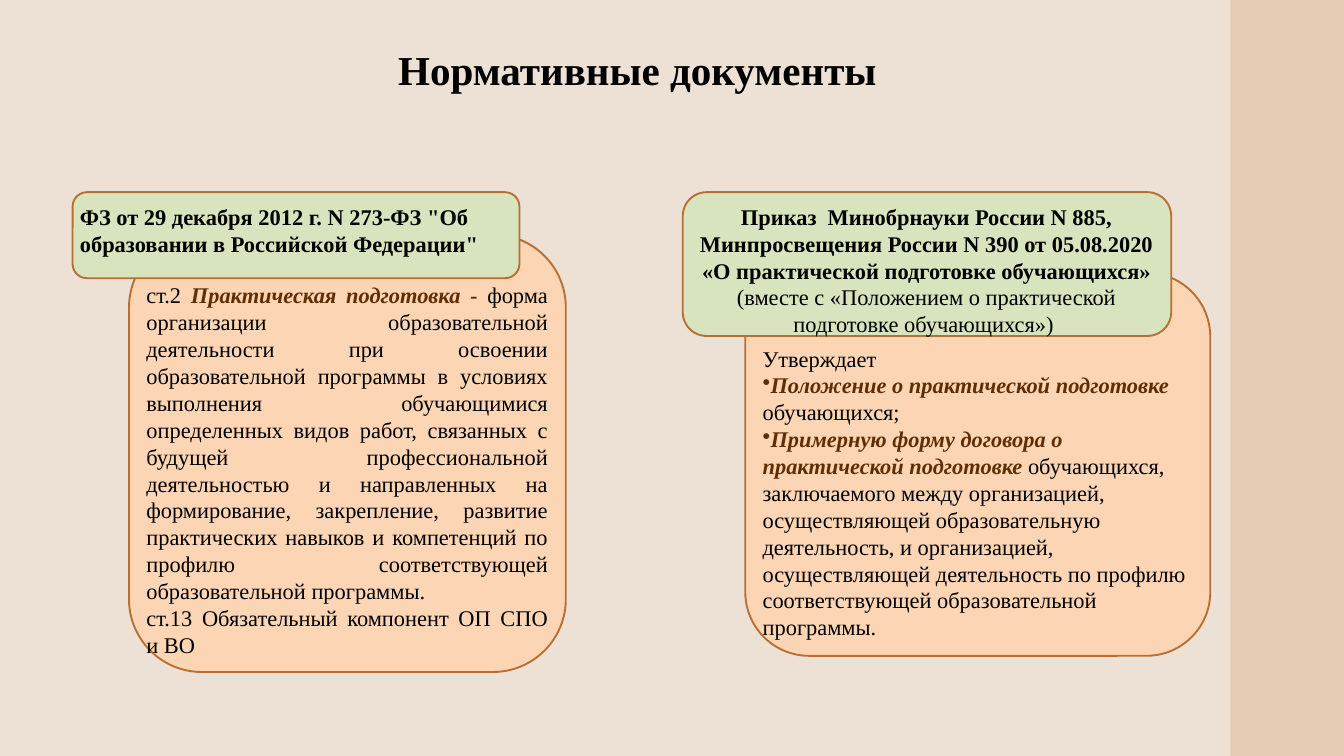
"""Build the slide on regulatory documents for practical training."""
from lxml.etree import SubElement
from pptx import Presentation
from pptx.dml.color import RGBColor
from pptx.enum.shapes import MSO_SHAPE
from pptx.enum.text import MSO_AUTO_SIZE, PP_ALIGN
from pptx.oxml.ns import qn
from pptx.util import Inches, Pt

HUES = {"back": "EDE0D4", "band": "E6CCB2", "card": "FCD5B5", "head": "D7E4BD",
        "edge": "B76F34", "text": "000000", "term": "602E04"}
FORMS = {
    "title": {"size": Pt(44), "bold": True, "italic": False},
    "plain": {"size": Pt(24), "bold": False, "italic": False},
    "bold": {"size": Pt(24), "bold": True, "italic": False},
    "term": {"size": Pt(24), "bold": True, "italic": True},
    "dash": {"size": Pt(24), "bold": True, "italic": False},
}
TINTS = {"term": "term", "dash": "term"}


def add_box(kind, area, hue, edge=None):
    box = slide.shapes.add_shape(kind, *map(Inches, area))
    box.shadow.inherit = False
    box.fill.solid()
    box.fill.fore_color.rgb = RGBColor.from_string(HUES[hue])
    if edge:
        box.line.color.rgb = RGBColor.from_string(HUES[edge])
        box.line.width = Pt(2)
    else:
        box.line.fill.background()


def add_text(area, align, paras, inset=None, space=None):
    frame = slide.shapes.add_textbox(*map(Inches, area)).text_frame
    frame.word_wrap = True
    frame.auto_size = MSO_AUTO_SIZE.SHAPE_TO_FIT_TEXT
    if inset is not None:
        for side in ("left", "top", "right", "bottom"):
            setattr(frame, f"margin_{side}", Inches(inset))
    for num, (mark, runs) in enumerate(paras):
        para = frame.add_paragraph() if num else frame.paragraphs[0]
        para.alignment = align
        if space:
            para.line_spacing = space
        if mark:
            SubElement(para._p.get_or_add_pPr(), qn("a:buChar")).set("char", mark)
        for form, words in runs:
            run = para.add_run()
            run.text = words
            run.font.name = "Times New Roman"
            run.font.color.rgb = RGBColor.from_string(HUES[TINTS.get(form, "text")])
            for key, value in FORMS[form].items():
                setattr(run.font, key, value)


deck = Presentation()
deck.slide_width, deck.slide_height = Inches(20), Inches(11.25)
slide = deck.slides.add_slide(deck.slide_layouts[6])
slide.background.fill.solid()
slide.background.fill.fore_color.rgb = RGBColor.from_string(HUES["back"])

add_box(MSO_SHAPE.RECTANGLE, (18.31, 0, 1.69, 11.25), "band")
add_text((1.5, 0.29, 16.13, 0.98), PP_ALIGN.CENTER,
         [(None, [("title", "Нормативные документы ")])], inset=0, space=1.5)

for card, head in [
    ((1.92, 3.49, 6.5, 6.51), (1.08, 2.86, 6.65, 1.28)),
    ((11.09, 4.06, 6.92, 5.7), (10.16, 2.86, 7.27, 2.14)),
]:
    add_box(MSO_SHAPE.ROUNDED_RECTANGLE, card, "card", "edge")
    add_box(MSO_SHAPE.ROUNDED_RECTANGLE, head, "head", "edge")

add_text((10.31, 2.97, 6.95, 2.12), PP_ALIGN.CENTER, [(None, [
    ("bold", "Приказ  Минобрнауки России N 885, Минпросвещения России N 390 "
             "от 05.08.2020 «О практической подготовке обучающихся» "),
    ("plain", "(вместе с «Положением о практической подготовке обучающихся») "),
])])
add_text((2.08, 4.14, 6.17, 5.76), PP_ALIGN.JUSTIFY, [
    (None, [
        ("plain", "ст.2 "),
        ("term", "Практическая подготовка "),
        ("dash", "- "),
        ("plain", "форма организации образовательной деятельности при освоении "
                  "образовательной программы в условиях выполнения обучающимися "
                  "определенных видов работ, связанных с будущей профессиональной "
                  "деятельностью и направленных на формирование, закрепление, "
                  "развитие практических навыков и компетенций по профилю "
                  "соответствующей образовательной программы. "),
    ]),
    (None, [("plain", "ст.13 Обязательный компонент ОП СПО и ВО")]),
])
add_text((1.09, 2.97, 6.56, 0.91), PP_ALIGN.LEFT, [(None, [
    ("bold", 'ФЗ от 29 декабря 2012 г. N 273-ФЗ "Об образовании в Российской Федерации"'),
])])
add_text((11.25, 5.08, 6.72, 4.54), PP_ALIGN.LEFT, [
    (None, [("plain", "Утверждает")]),
    ("•", [("term", "Положение о практической подготовке "),
           ("plain", "обучающихся;")]),
    ("•", [("term", "Примерную форму договора о практической подготовке "),
           ("plain", "обучающихся, заключаемого между организацией, осуществляющей "
                     "образовательную деятельность, и организацией, осуществляющей "
                     "деятельность по профилю соответствующей образовательной "
                     "программы.")]),
])

deck.save("out.pptx")
